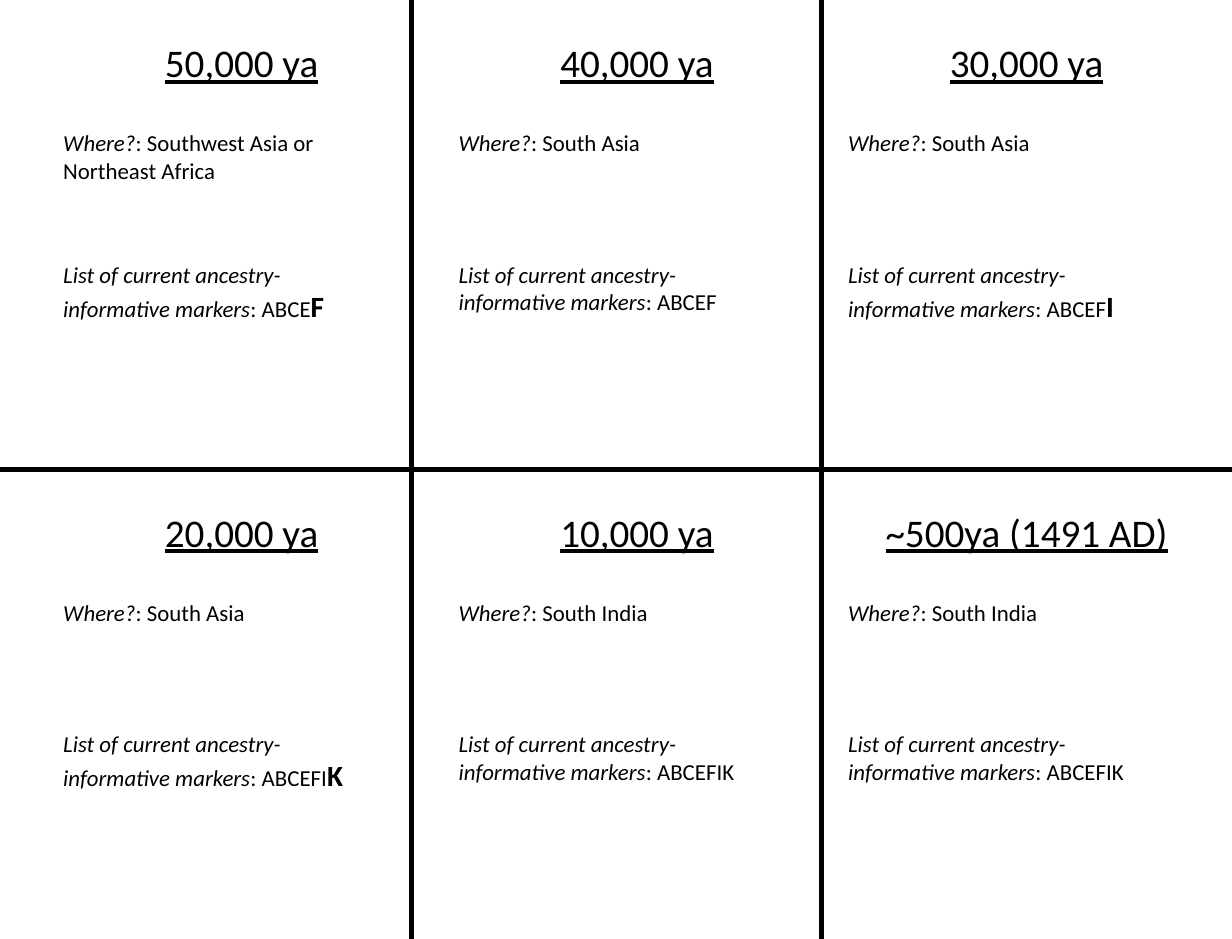
"""Build a six-panel slide of ancestry-informative markers through time."""
from lxml.etree import SubElement
from pptx import Presentation
from pptx.dml.color import RGBColor
from pptx.enum.shapes import MSO_CONNECTOR
from pptx.enum.text import MSO_AUTO_SIZE, PP_ALIGN
from pptx.oxml.ns import qn
from pptx.util import Pt

PX = 9144
WIDTH, HEIGHT = 1050, 800
BLACK = "000000"
COLUMN_LEFTS = [44, 381, 713]
ROW_HEIGHT = HEIGHT // 2
PANELS = [
    ("50,000 ya", "Southwest Asia or Northeast Africa", "ABCE", "F"),
    ("40,000 ya", "South Asia", "ABCEF", ""),
    ("30,000 ya", "South Asia", "ABCEF", "I"),
    ("20,000 ya", "South Asia", "ABCEFI", "K"),
    ("10,000 ya", "South India", "ABCEFIK", ""),
    ("~500ya (1491 AD)", "South India", "ABCEFIK", ""),
]


def color(value):
    return RGBColor.from_string(value)


def add_run(paragraph, text, size=14, bold=False, italic=False, underline=False):
    run = paragraph.add_run()
    run.text = text
    font = run.font
    font.name = "Calibri"
    font.size = Pt(size)
    font.bold, font.italic, font.underline = bold, italic, underline
    font.color.rgb = color(BLACK)


presentation = Presentation()
presentation.slide_width = WIDTH * PX
presentation.slide_height = HEIGHT * PX
slide = presentation.slides.add_slide(presentation.slide_layouts[6])

dividers = [
    (0, ROW_HEIGHT, WIDTH, ROW_HEIGHT),
    (351, 0, 351, HEIGHT),
    (700, 0, 700, HEIGHT),
]
for ends in dividers:
    divider = slide.shapes.add_connector(MSO_CONNECTOR.STRAIGHT, *[end * PX for end in ends])
    divider.line.color.rgb = color(BLACK)
    divider.line.width = Pt(3)
    SubElement(divider._element.spPr, qn("a:effectLst"))

for index, (date, place, markers, new_marker) in enumerate(PANELS):
    row, column = divmod(index, len(COLUMN_LEFTS))
    paragraphs = []
    for top, width, height in [(28, 324, 50), (105, 285, 34), (217, 285, 57)]:
        box = slide.shapes.add_textbox(
            COLUMN_LEFTS[column] * PX, (row * ROW_HEIGHT + top) * PX, width * PX, height * PX
        )
        box.text_frame.word_wrap = True
        box.text_frame.auto_size = MSO_AUTO_SIZE.SHAPE_TO_FIT_TEXT
        paragraphs.append(box.text_frame.paragraphs[0])

    heading, location, marker_list = paragraphs
    heading.alignment = PP_ALIGN.CENTER
    add_run(heading, date, size=24, underline=True)
    add_run(location, "Where?", italic=True)
    add_run(location, f": {place}")
    add_run(marker_list, "List of current ancestry-informative markers", italic=True)
    add_run(marker_list, f": {markers}")
    if new_marker:
        add_run(marker_list, new_marker, size=18, bold=True)

presentation.save("out.pptx")
